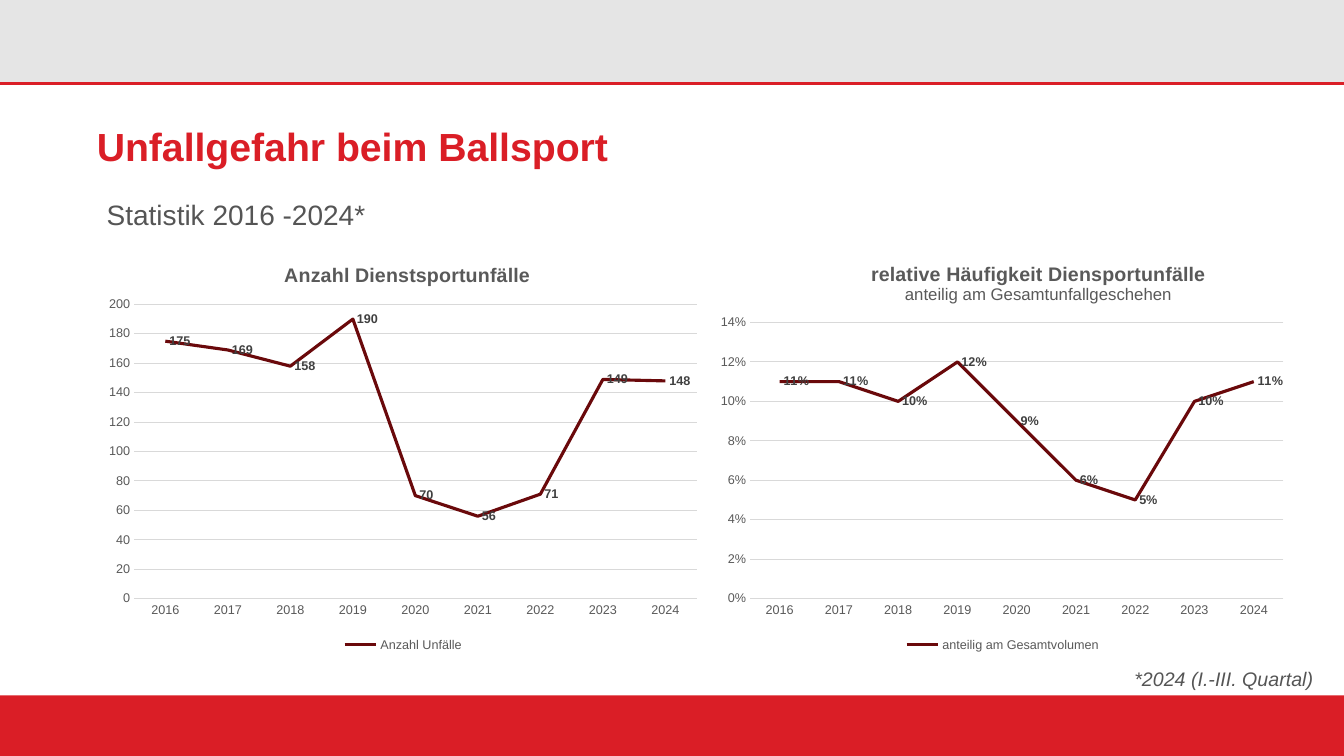
from lxml import etree
from pptx import Presentation
from pptx.chart.data import CategoryChartData
from pptx.dml.color import RGBColor
from pptx.enum.chart import (XL_CHART_TYPE, XL_LABEL_POSITION, XL_LEGEND_POSITION,
                             XL_MARKER_STYLE, XL_TICK_MARK)
from pptx.enum.shapes import MSO_CONNECTOR, MSO_SHAPE
from pptx.oxml import parse_xml
from pptx.oxml.ns import nsdecls, qn
from pptx.util import Inches, Pt

LINE_CHART = XL_CHART_TYPE.LINE
RIGHT = XL_LABEL_POSITION.RIGHT
BOTTOM = XL_LEGEND_POSITION.BOTTOM
NO_MARKER = XL_MARKER_STYLE.NONE
NO_TICK = XL_TICK_MARK.NONE
RECT = MSO_SHAPE.RECTANGLE
STRAIGHT = MSO_CONNECTOR.STRAIGHT

FONT = "Arial"
RED, DARK_RED = "DA1E26", "6A090B"
LIGHT, GRID = "E5E5E5", "D9D9D9"
GREY, CHART_GREY, LABEL_GREY = "555555", "595959", "404040"
WIDTH = 13.33
YEARS = [str(year) for year in range(2016, 2025)]


def rgb(color):
    return RGBColor.from_string(color)


def set_font(font, size, color, bold=False, italic=False):
    font.name, font.size = FONT, Pt(size)
    font.bold, font.italic = bold, italic
    font.color.rgb = rgb(color)


def set_line(line, color, width):
    line.color.rgb = rgb(color)
    line.width = Pt(width)


def add_band(s, top, height, color):
    sp = s.shapes.add_shape(RECT, 0, Inches(top), Inches(WIDTH), Inches(height))
    sp.shadow.inherit = False
    sp.fill.solid()
    sp.fill.fore_color.rgb = rgb(color)
    sp.line.fill.background()


def add_rule(s, top, color, width):
    y = Inches(top)
    rule = s.shapes.add_connector(STRAIGHT, 0, y, Inches(WIDTH), y)
    set_line(rule.line, color, width)
    etree.SubElement(rule._element.spPr, qn("a:effectLst"))


def add_text(s, text, box, size, color, inset=(0, 0), spacing=None, wrap=True, **style):
    """Add one line of text; inset is the left and top margin in inches."""
    tf = s.shapes.add_textbox(*map(Inches, box)).text_frame
    tf.word_wrap = wrap
    tf.margin_left, tf.margin_top = map(Inches, inset)
    tf.margin_right = tf.margin_bottom = 0
    p = tf.paragraphs[0]
    p.line_spacing = spacing
    r = p.add_run()
    r.text = text
    set_font(r.font, size, color, **style)


def layout_xml(inner=False, **fractions):
    """Build a manual layout from fractions of the chart area."""
    target = '<c:layoutTarget val="inner"/>' if inner else ""
    modes = '<c:xMode val="edge"/><c:yMode val="edge"/>'
    values = "".join(f'<c:{k} val="{v:.4f}"/>' for k, v in fractions.items())
    return parse_xml(f'<c:layout {nsdecls("c")}><c:manualLayout>{target}{modes}{values}'
                     "</c:manualLayout></c:layout>")


def place(element, layout, after=None):
    """Give a chart part its layout, as first child or behind a given child."""
    for old in element.findall(qn("c:layout")):
        element.remove(old)
    index = 0 if after is None else element.index(element.find(qn(after))) + 1
    element.insert(index, layout)


def add_title(chart, lines, x):
    tf = chart.chart_title.text_frame
    for i, (text, size, bold) in enumerate(lines):
        p = tf.add_paragraph() if i else tf.paragraphs[0]
        r = p.add_run()
        r.text = text
        set_font(r.font, size, CHART_GREY, bold=bold)
    chart.chart_title.include_in_layout = False
    place(chart.chart_title._element, layout_xml(x=x, y=0.035), after="c:tx")


def format_axes(chart, top, step, number_format):
    for axis in (chart.category_axis, chart.value_axis):
        axis.major_tick_mark = axis.minor_tick_mark = NO_TICK
        set_font(axis.tick_labels.font, 9, CHART_GREY)
    set_line(chart.category_axis.format.line, GRID, 0.75)
    values = chart.value_axis
    values.minimum_scale, values.maximum_scale, values.major_unit = 0, top, step
    values.format.line.fill.background()
    set_line(values.major_gridlines.format.line, GRID, 0.75)
    values.tick_labels.number_format = number_format
    values.tick_labels.number_format_is_linked = False


def format_series(series, number_format):
    series.smooth = False
    series.marker.style = NO_MARKER
    set_line(series.format.line, DARK_RED, 2.25)
    labels = series.data_labels
    labels.show_value = True
    labels.position = RIGHT
    labels.number_format = number_format
    labels.number_format_is_linked = False
    set_font(labels.font, 9, LABEL_GREY, bold=True)


def add_line_chart(s, box, plot, name, values, title, title_x, top, step, number_format):
    """Add a line chart; box and plot are left, top, width, height on the slide."""
    data = CategoryChartData(number_format=number_format)
    data.categories = YEARS
    data.add_series(name, values)
    chart = s.shapes.add_chart(LINE_CHART, *map(Inches, box), data).chart
    set_font(chart.font, 10, "000000")
    add_title(chart, title, title_x)
    chart.has_legend = True
    chart.legend.position = BOTTOM
    chart.legend.include_in_layout = False
    set_font(chart.legend.font, 9, CHART_GREY)
    format_axes(chart, top, step, number_format)
    chart.plots[0].vary_by_categories = False
    format_series(chart.plots[0].series[0], number_format)
    left, upper, width, height = box
    place(chart._chartSpace.chart.plotArea,
          layout_xml(inner=True, x=(plot[0] - left) / width, y=(plot[1] - upper) / height,
                     w=plot[2] / width, h=plot[3] / height))


def main():
    prs = Presentation()
    prs.slide_width, prs.slide_height = Inches(WIDTH), Inches(7.5)
    s = prs.slides.add_slide(prs.slide_layouts[6])

    add_band(s, 0, 0.83, LIGHT)
    add_band(s, 6.9, 0.6, RED)
    add_rule(s, 0.83, RED, 2)
    add_text(s, "Unfallgefahr beim Ballsport", (0.96, 1.27, 11.42, 0.57), 28, RED,
             spacing=0.9, bold=True)

    add_line_chart(s, (0.96, 2.42, 6.08, 4.09), (1.33, 3.02, 5.58, 2.92),
                   "Anzahl Unfälle", [175, 169, 158, 190, 70, 56, 71, 149, 148],
                   [("Anzahl Dienstsportunfälle", 14, True)], 0.3, 200, 20, "General")
    add_line_chart(s, (7.04, 2.42, 5.81, 4.09), (7.44, 3.2, 5.29, 2.74),
                   "anteilig am Gesamtvolumen",
                   [0.11, 0.11, 0.1, 0.12, 0.09, 0.06, 0.05, 0.1, 0.11],
                   [("relative Häufigkeit Diensportunfälle", 14, True),
                    ("anteilig am Gesamtunfallgeschehen", 12, False)],
                   0.27, 0.14, 0.02, "0%")

    add_text(s, "Statistik 2016 -2024*", (0.96, 1.95, 8.96, 0.35), 20, GREY,
             inset=(0.1, 0.05), spacing=0.9)
    add_text(s, "*2024 (I.-III. Quartal)", (11.25, 6.62, 1.85, 0.24), 14, GREY,
             wrap=False, italic=True)
    prs.save("out.pptx")


if __name__ == "__main__":
    main()
